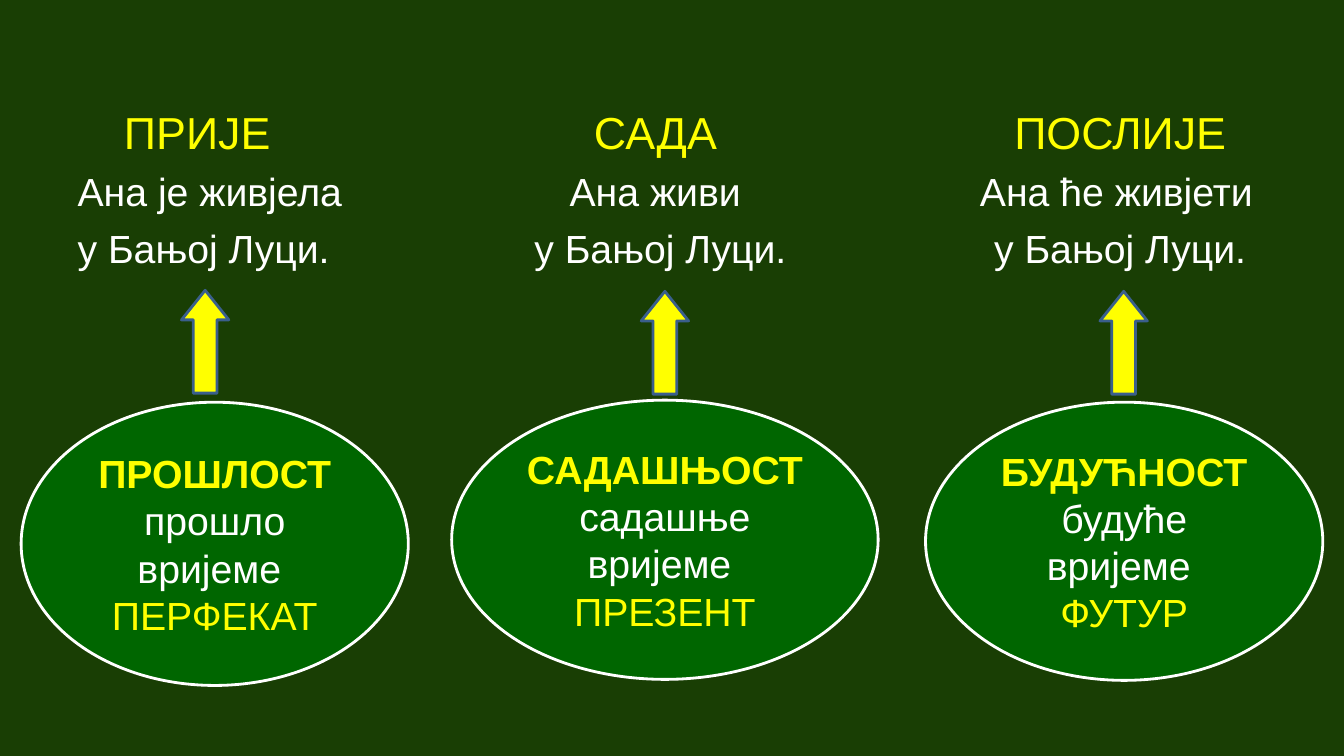
from pptx import Presentation
from pptx.dml.color import RGBColor
from pptx.enum import shapes, text
from pptx.util import Inches, Pt

YELLOW, WHITE = "FFFF00", "FFFFFF"
DARK_GREEN, GREEN, BLUE = "193E04", "006600", "3A5F8C"

TENSES = [
    {
        "example": (0.77, [("ПРИЈЕ", 0.46), ("Ана је живјела", 0), ("у Бањој Луци.", 0)]),
        "arrow": (1.80, 2.88),
        "oval": (0.21, 3.99, 3.84, 2.81),
        "names": ["ПРОШЛОСТ", "прошло", "вријеме ", "ПЕРФЕКАТ"],
    },
    {
        "example": (5.30, [("САДА", 0.59), ("Ана живи", 0.35), ("у Бањој Луци.", 0)]),
        "arrow": (6.36, 2.89),
        "oval": (4.48, 3.97, 4.23, 2.77),
        "names": ["САДАШЊОСТ", "садашње", "вријеме ", "ПРЕЗЕНТ"],
    },
    {
        "example": (9.72, [("ПОСЛИЈЕ", 0.34), ("Ана ће живјети", 0), ("у Бањој Луци.", 0.14)]),
        "arrow": (10.91, 2.89),
        "oval": (9.18, 3.99, 3.94, 2.76),
        "names": ["БУДУЋНОСТ", "будуће", "вријеме ", "ФУТУР"],
    },
]


def paint(color_format, color):
    color_format.rgb = RGBColor.from_string(color)


def apply(target, values):
    for key, value in values.items():
        setattr(target, key, value)


def write_line(frame, index, words, color, size=28, bold=False):
    line = frame.paragraphs[0] if index == 0 else frame.add_paragraph()
    run = line.add_run()
    run.text = words
    apply(run.font, {"name": "Arial", "size": Pt(size), "bold": bold})
    paint(run.font.color, color)
    return line


def add_example(slide, left, lines):
    box = slide.shapes.add_textbox(Inches(left), Inches(1.04), Inches(3.2), Inches(1.65))
    frame = box.text_frame
    apply(frame, {"word_wrap": True, "margin_left": 0, "margin_right": 0,
                  "margin_top": 0, "margin_bottom": 0})
    for index, (words, indent) in enumerate(lines):
        heading = index == 0
        line = write_line(frame, index, words, YELLOW if heading else WHITE,
                          32 if heading else 28)
        line._p.get_or_add_pPr().set("marL", str(Inches(indent)))
        if not heading:
            line.space_before = Pt(6.5)


def add_figure(slide, kind, place, fill, outline):
    figure = slide.shapes.add_shape(kind, *map(Inches, place))
    figure.shadow.inherit = False
    figure.fill.solid()
    paint(figure.fill.fore_color, fill)
    paint(figure.line.color, outline)
    figure.line.width = Pt(2)
    return figure


def add_oval(slide, place, names):
    oval = add_figure(slide, shapes.MSO_SHAPE.OVAL, place, GREEN, WHITE)
    frame = oval.text_frame
    apply(frame, {"word_wrap": True, "vertical_anchor": text.MSO_ANCHOR.MIDDLE})
    for index, (words, color) in enumerate(zip(names, (YELLOW, WHITE, WHITE, YELLOW))):
        line = write_line(frame, index, words, color, bold=index == 0)
        line.alignment = text.PP_ALIGN.CENTER


def add_arrow(slide, left, top):
    arrow = add_figure(slide, shapes.MSO_SHAPE.UP_ARROW, (left, top, 0.47, 1.02), YELLOW, BLUE)
    arrow.adjustments[0] = 0.5
    arrow.adjustments[1] = 0.625


def main():
    deck = Presentation()
    apply(deck, {"slide_width": Inches(13.33), "slide_height": Inches(7.5)})
    slide = deck.slides.add_slide(deck.slide_layouts[6])
    slide.background.fill.solid()
    paint(slide.background.fill.fore_color, DARK_GREEN)
    for tense in TENSES:
        add_example(slide, *tense["example"])
        add_oval(slide, tense["oval"], tense["names"])
        add_arrow(slide, *tense["arrow"])
    deck.save("out.pptx")


if __name__ == "__main__":
    main()
